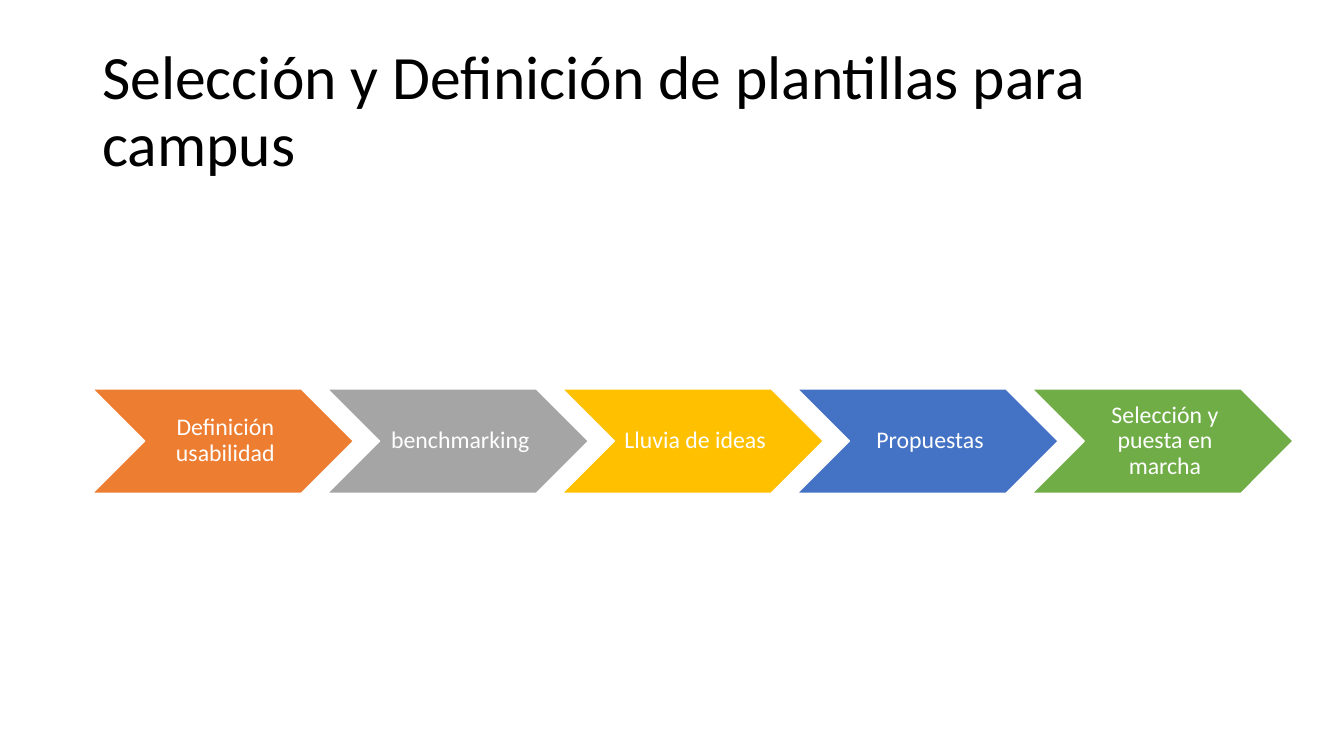
import pptx
import pptx.util
import pptx.dml.color
import pptx.enum.shapes
import pptx.enum.text

Cm = pptx.util.Cm
Pt = pptx.util.Pt
RGBColor = pptx.dml.color.RGBColor

BLACK = RGBColor(0x00, 0x00, 0x00)
WHITE = RGBColor(0xFF, 0xFF, 0xFF)
ORANGE = RGBColor(0xED, 0x7D, 0x31)
GRAY = RGBColor(0xA5, 0xA5, 0xA5)
GOLD = RGBColor(0xFF, 0xC0, 0x00)
BLUE = RGBColor(0x44, 0x72, 0xC4)
GREEN = RGBColor(0x70, 0xAD, 0x47)

LEFT = 2.33
STEP_TOP, STEP_WIDTH, STEP_HEIGHT = 9.8, 6.58, 2.63
STEP_PITCH = 5.92

STEPS = [
    ("Definición usabilidad", ORANGE),
    ("benchmarking", GRAY),
    ("Lluvia de ideas", GOLD),
    ("Propuestas", BLUE),
    ("Selección y puesta en marcha", GREEN),
]


def write_text(s, text, size, color, align):
    tf = s.text_frame
    tf.text = text
    tf.word_wrap = True
    tf.vertical_anchor = pptx.enum.text.MSO_ANCHOR.MIDDLE
    p = tf.paragraphs[0]
    p.alignment = align
    p.line_spacing = 0.9
    r = p.runs[0]
    r.font.name = "Calibri"
    r.font.size = Pt(size)
    r.font.color.rgb = color


prs = pptx.Presentation()
prs.slide_width = Cm(33.87)
prs.slide_height = Cm(19.05)
slide = prs.slides.add_slide(prs.slide_layouts[6])

title = slide.shapes.add_textbox(Cm(LEFT), Cm(1.01), Cm(29.21), Cm(3.68))
write_text(title, "Selección y Definición de plantillas para campus", 44, BLACK,
           pptx.enum.text.PP_ALIGN.LEFT)

for i, (label, color) in enumerate(STEPS):
    s = slide.shapes.add_shape(
        pptx.enum.shapes.MSO_SHAPE.CHEVRON,
        Cm(LEFT + i * STEP_PITCH), Cm(STEP_TOP), Cm(STEP_WIDTH), Cm(STEP_HEIGHT))
    s.shadow.inherit = False
    s.fill.solid()
    s.fill.fore_color.rgb = color
    s.line.color.rgb = WHITE
    s.line.width = Pt(1)
    write_text(s, label, 17, WHITE, pptx.enum.text.PP_ALIGN.CENTER)
    tf = s.text_frame
    tf.margin_left = Cm(0.18)
    tf.margin_top = tf.margin_right = tf.margin_bottom = Cm(0.06)

prs.save("out.pptx")
